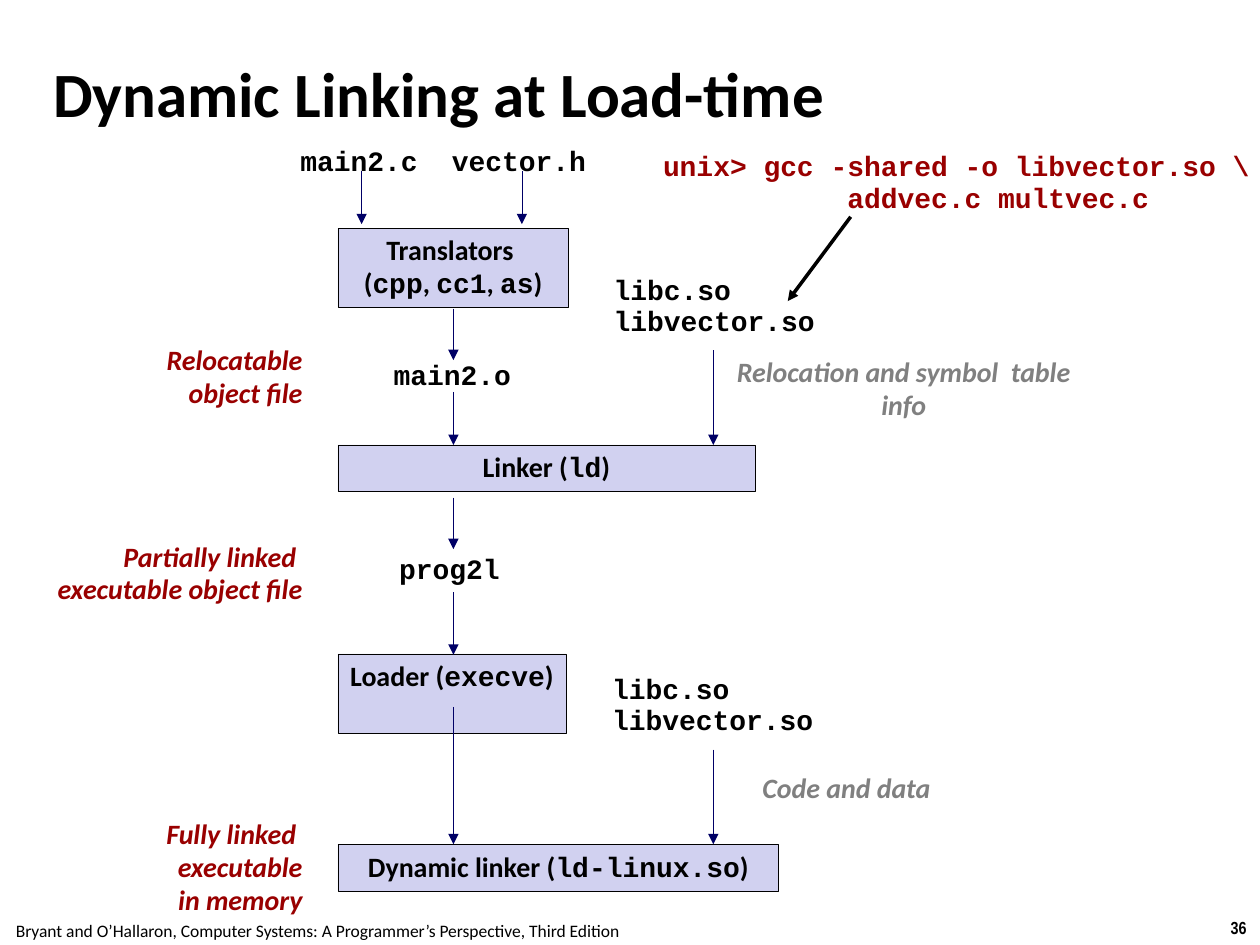
"""Build the slide on dynamic linking at load time."""
import pptx
import pptx.dml.color
import pptx.enum.shapes
import pptx.enum.text
import pptx.oxml
import pptx.oxml.ns
import pptx.util

Cm, Pt = pptx.util.Cm, pptx.util.Pt
Align = pptx.enum.text.PP_ALIGN
Anchor = pptx.enum.text.MSO_ANCHOR

THEME = {
    "sans": "Calibri", "mono": "Courier New", "thin": "Arial Narrow",
    "ink": "000000", "red": "990000", "gray": "808080",
    "navy": "000066", "fill": "D1D1F0",
    "title": 36, "body": 16, "foot": 10,
}

TITLE = "Dynamic Linking at Load-time"
CREDIT = "Bryant and O’Hallaron, Computer Systems: A Programmer’s Perspective, Third Edition"
PAGE = "36"

LEFT = 6.81
STEPS = [
    (4.6, 4.65, 1.6, ["Translators ", "(`cpp`, `cc1`, `as`)"]),
    (8.97, 8.41, 0.94, ["Linker (`ld`)"]),
    (13.18, 4.6, 1.6, ["Loader (`execve`)"]),
    (17.02, 8.89, 0.94, ["Dynamic linker (`ld-linux.so`)"]),
]

FILES = [
    (7.24, 2.82, "main2.c"),
    (10.46, 2.82, "vector.h"),
    (9.12, 7.14, "main2.o"),
    (9.06, 11.05, "prog2l"),
]
LIBS = ["libc.so", "libvector.so"]
SPOTS = [(12.12, 5.41), (12.09, 13.46)]
SHELL = ["unix> gcc -shared -o libvector.so \\", "addvec.c multvec.c"]

EDGE = 6.35
STATES = [
    (6.81, 3.81, ["Relocatable", "object file"]),
    (10.77, 6.99, ["Partially linked ", "executable object file"]),
    (16.36, 4.88, ["Fully linked ", "executable", "in memory"]),
]
NOTES = [
    (7.06, 7.24, 1.6, "Relocation and symbol  table info"),
    (15.44, 4.93, 0.94, "Code and data"),
]

FLOWS = {
    7.29: [(3.45, 4.52)],
    10.52: [(3.45, 4.52)],
    9.14: [(6.22, 7.26), (7.9, 8.97), (10.03, 11.07), (11.94, 13.2), (14.25, 17.02)],
    14.38: [(7.06, 8.97), (15.11, 17.02)],
}
POINTER = (17.15, 4.37, 15.88, 6.07)


def color(name):
    return pptx.dml.color.RGBColor.from_string(THEME[name])


def write(shape, lines, font="sans", size="body", ink="ink", bold=True, slant=False,
          align=Align.CENTER, space=0.98, anchor=Anchor.TOP, pad=(0.25, 0.13), shift=()):
    frame = shape.text_frame
    frame.word_wrap = True
    frame.vertical_anchor = anchor
    frame.margin_left = frame.margin_right = Cm(pad[0])
    frame.margin_top = frame.margin_bottom = Cm(pad[1])
    for row, line in enumerate(lines):
        para = frame.add_paragraph() if row else frame.paragraphs[0]
        para.alignment = align
        para.line_spacing = space
        if row in shift:
            para._p.get_or_add_pPr().set("marL", str(Cm(1.69)))
        for part, text in enumerate(line.split("`")):
            run = para.add_run()
            run.text = text
            run.font.name = THEME["mono" if part % 2 else font]
            run.font.size = Pt(THEME[size])
            run.font.bold = bold
            run.font.italic = slant
            run.font.color.rgb = color(ink)


def label(slide, x, y, w, h, lines, **style):
    write(slide.shapes.add_textbox(Cm(x), Cm(y), Cm(w), Cm(h)), lines, **style)


def box(slide, y, w, h, lines):
    kind = pptx.enum.shapes.MSO_SHAPE.RECTANGLE
    shape = slide.shapes.add_shape(kind, Cm(LEFT), Cm(y), Cm(w), Cm(h))
    shape.shadow.inherit = False
    shape.fill.solid()
    shape.fill.fore_color.rgb = color("fill")
    shape.line.color.rgb = color("ink")
    shape.line.width = Pt(0.25)
    write(shape, lines)


def arrow(slide, ends, ink="navy", width=0.25):
    kind = pptx.enum.shapes.MSO_CONNECTOR.STRAIGHT
    link = slide.shapes.add_connector(kind, *map(Cm, ends))
    link.line.color.rgb = color(ink)
    link.line.width = Pt(width)
    space = pptx.oxml.ns.nsdecls("a")
    head = pptx.oxml.parse_xml(f'<a:tailEnd {space} type="triangle"/>')
    link.line._get_or_add_ln().append(head)
    link._element.spPr.append(pptx.oxml.parse_xml(f"<a:effectLst {space}/>"))


def main():
    deck = pptx.Presentation()
    deck.slide_width, deck.slide_height = Cm(25.4), Cm(19.05)
    slide = deck.slides.add_slide(deck.slide_layouts[6])

    label(slide, 0.97, 0.79, 24.2, 2.16, [TITLE], size="title", align=Align.LEFT,
          space=1, anchor=Anchor.MIDDLE, pad=(0.1, 0.1))
    label(slide, -0.05, 18.42, 12.9, 0.69, [CREDIT], size="foot", bold=False, space=1)
    label(slide, 24.54, 18.36, 0.86, 0.69, [PAGE], font="thin", size="foot",
          space=1, pad=(0.1, 0.13))

    for step in STEPS:
        box(slide, *step)
    code = {"font": "mono", "space": 0.94}
    for mid, y, name in FILES:
        label(slide, mid - 1.65, y, 3.3, 0.91, [name], **code)
    for x, y in SPOTS:
        label(slide, x, y, 4.7, 1.55, LIBS, align=Align.LEFT, **code)
    label(slide, 13.03, 2.92, 12.5, 1.55, SHELL, ink="red", shift=(1,), **code)

    for y, w, lines in STATES:
        label(slide, EDGE - w, y, w, 0.28 + 0.66 * len(lines), lines,
              ink="red", slant=True, align=Align.RIGHT)
    for y, w, h, text in NOTES:
        label(slide, 14.6, y, w, h, [text], ink="gray", slant=True)

    for x, spans in FLOWS.items():
        for top, end in spans:
            arrow(slide, (x, top, x, end))
    arrow(slide, POINTER, ink="ink", width=2)
    deck.save("out.pptx")


if __name__ == "__main__":
    main()
